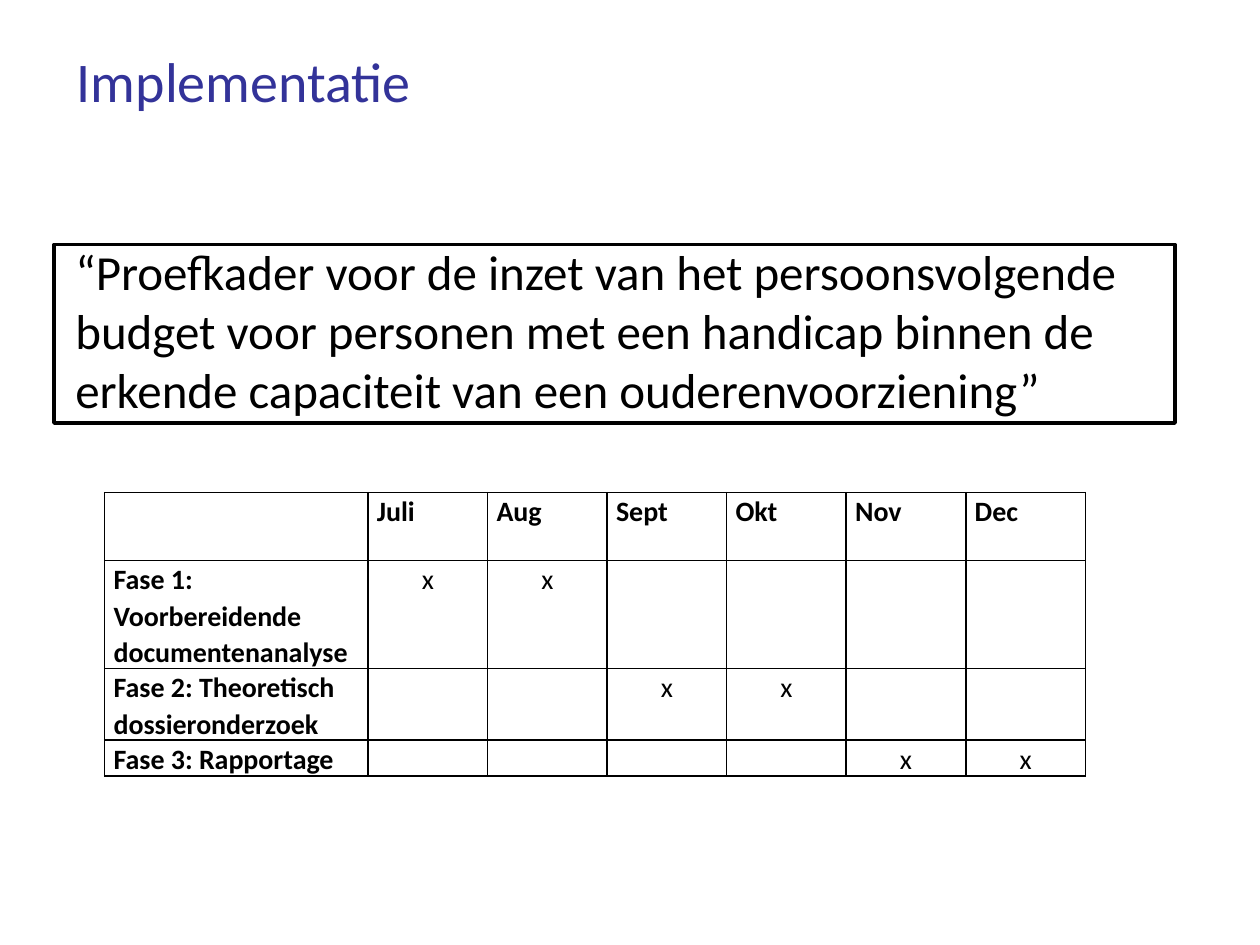
from lxml.etree import SubElement
from pptx import Presentation
from pptx.dml.color import RGBColor
from pptx.enum.shapes import MSO_SHAPE
from pptx.enum.text import MSO_ANCHOR as ANCHOR, PP_ALIGN as ALIGN
from pptx.oxml.ns import qn
from pptx.util import Cm, Pt

BLACK = RGBColor(0x00, 0x00, 0x00)
BLUE = RGBColor(0x33, 0x33, 0x99)
FONT = "Calibri"


def add_run(p, text, size, color=BLACK, bold=False):
    r = p.add_run()
    r.text = text
    r.font.name = FONT
    r.font.size = Pt(size)
    r.font.bold = bold
    r.font.color.rgb = color


def add_borders(cell):
    tcPr = cell._tc.get_or_add_tcPr()
    for side in ("a:lnL", "a:lnR", "a:lnT", "a:lnB"):
        ln = SubElement(tcPr, qn(side), w=str(Pt(1)))
        fill = SubElement(ln, qn("a:solidFill"))
        SubElement(fill, qn("a:srgbClr"), val=str(BLACK))


prs = Presentation()
prs.slide_width, prs.slide_height = Cm(25.4), Cm(19.05)
s = prs.slides.add_slide(prs.slide_layouts[6])

# Title and quote
texts = [
    ("Implementatie", 32, BLUE, 1.3, 0.33, 2.57, ANCHOR.MIDDLE),
    ("“Proefkader voor de inzet van het persoonsvolgende budget voor "
     "personen met een handicap binnen de erkende capaciteit van een "
     "ouderenvoorziening”", 28, BLACK, 1.27, 4.75, 3.9, ANCHOR.TOP),
]
for text, size, color, left, top, height, anchor in texts:
    tf = s.shapes.add_textbox(Cm(left), Cm(top), Cm(22.86), Cm(height)).text_frame
    tf.word_wrap = True
    tf.vertical_anchor = anchor
    add_run(tf.paragraphs[0], text, size, color)

# Planning table
months = ["Juli", "Aug", "Sept", "Okt", "Nov", "Dec"]
phases = [
    ("Fase 1: Voorbereidende documentenanalyse", ["Juli", "Aug"]),
    ("Fase 2: Theoretisch dossieronderzoek", ["Sept", "Okt"]),
    ("Fase 3: Rapportage", ["Nov", "Dec"]),
]
rows = [[""] + months]
for phase, active in phases:
    rows.append([phase] + ["x" if m in active else "" for m in months])

table = s.shapes.add_table(len(rows), len(rows[0]), Cm(2.11), Cm(9.93),
                           Cm(19.77), Cm(5.72)).table
for i, col in enumerate(table.columns):
    col.width = Cm(2.41) if i else Cm(5.31)
for row, height in zip(table.rows, (1.37, 1.37, 1.37, 0.69)):
    row.height = Cm(height)

for i, values in enumerate(rows):
    for j, value in enumerate(values):
        cell = table.cell(i, j)
        cell.margin_left = cell.margin_right = Cm(0.18)
        cell.margin_top = cell.margin_bottom = 0
        add_borders(cell)
        cell.fill.background()
        p = cell.text_frame.paragraphs[0]
        p.line_spacing = 1.07
        p.space_after = Pt(8)
        if value:
            is_mark = i > 0 and j > 0
            p.alignment = ALIGN.CENTER if is_mark else ALIGN.LEFT
            add_run(p, value, 16, bold=not is_mark)
        else:
            # Keep empty cells from stretching their row
            SubElement(p._p, qn("a:endParaRPr"), sz="1600")

# Frame around the quote
sp = s.shapes.add_shape(MSO_SHAPE.RECTANGLE, Cm(1.09), Cm(4.93), Cm(22.6), Cm(3.6))
sp.shadow.inherit = False
sp.fill.background()
sp.line.color.rgb = BLACK
sp.line.width = Pt(2)

prs.save("out.pptx")
